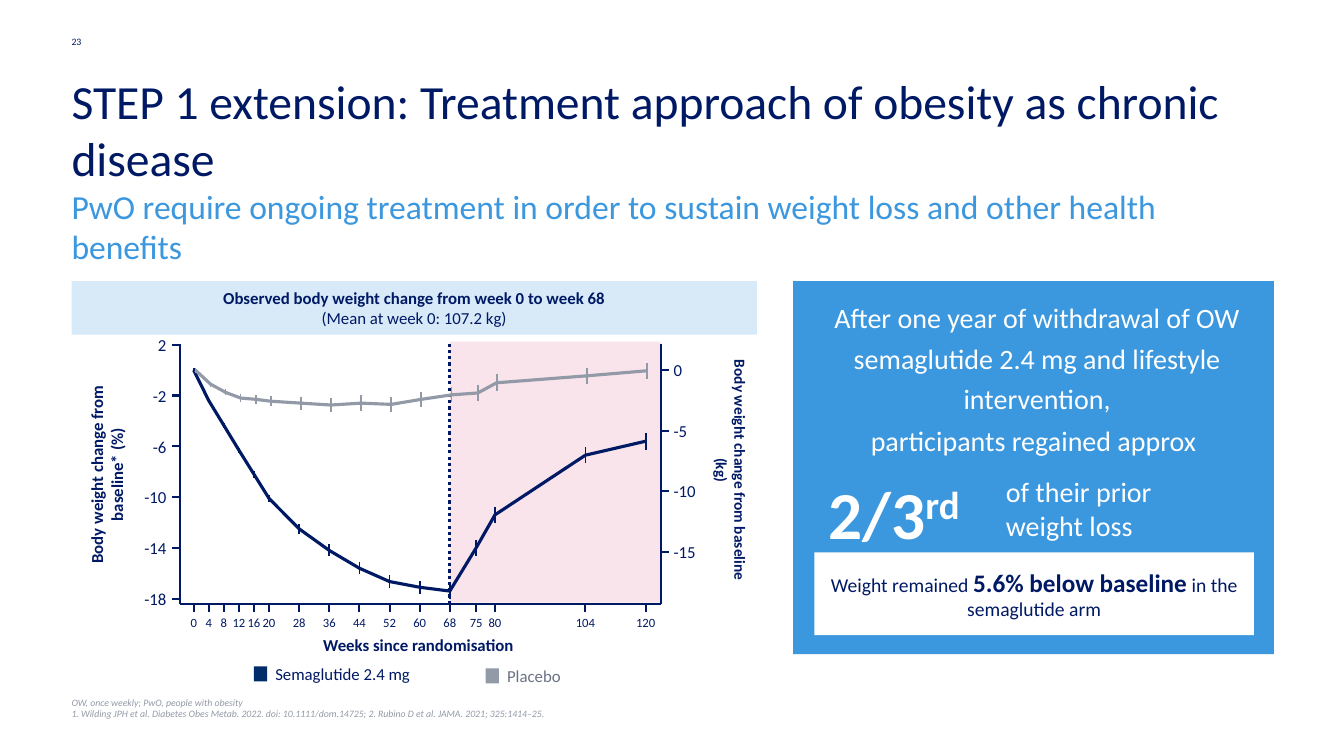
from copy import deepcopy
from pptx import Presentation
from pptx.dml.color import RGBColor
from pptx.enum.dml import MSO_LINE
from pptx.enum.shapes import MSO_CONNECTOR as CONN, MSO_SHAPE as SHAPE
from pptx.enum.text import MSO_ANCHOR as ANCHOR, MSO_AUTO_SIZE as AUTO, PP_ALIGN as ALIGN
from pptx.oxml.xmlchemy import OxmlElement
from pptx.util import Pt

NAVY, BLUE, GREY, WHITE = "001965", "3B97DE", "939AA7", "FFFFFF"
WEEKS = [0, 4, 8, 12, 16, 20, 28, 36, 44, 52, 60, 68, 75, 80, 104, 120]
SEMAGLUTIDE = [0, -2.4, -4.35, -6.3, -8.2, -10.1, -12.5, -14.2, -15.6, -16.65, -17.1,
               -17.4, -14, -11.4, -6.7, -5.6]
PLACEBO = [0, -1.1, -1.75, -2.2, -2.3, -2.45, -2.6, -2.75, -2.6, -2.7, -2.3,
           -1.95, -1.8, -1, -0.45, -0.05]
SEMAGLUTIDE_ERRORS = [1.5, 1.5, 1.8, 1.8, 2.5, 2.5, 3.6, 4.3, 4.3, 4.7, 4.7, 5.8, 5.8, 6, 5.8, 6]
PLACEBO_ERRORS = [1.8, 1.8, 2.2, 2.9, 3.2, 3.6, 4.7, 4.7, 5.8, 5.4, 5.4, 5.4, 6, 6, 5.8, 5.8]
LEFT, RIGHT, TOP, BOTTOM = 128.5, 472, 245.5, 431.5
ZERO, PER_PERCENT, PER_KG = 264.4, 9.07, 8.64
TICK = 5.8


def rgb(value):
    return RGBColor.from_string(value)


def week_x(week):
    return 138.4 + 2.69 * week


def percent_y(percent):
    return ZERO - PER_PERCENT * percent


def kg_y(kg):
    return ZERO - PER_KG * kg


class Slide:
    font = "Calibri"
    inset = (7.2, 3.6, 7.2, 3.6)

    def __init__(self, prs):
        self.s = prs.slides.add_slide(prs.slide_layouts[5])

    def put_text(self, sp, paragraphs, color=NAVY, inset=None, align=ALIGN.LEFT,
                 anchor=ANCHOR.TOP, spacing=None, **style):
        tf = sp.text_frame
        margins = dict(zip(("left", "top", "right", "bottom"), inset or self.inset))
        frame = {f"margin_{side}": Pt(gap) for side, gap in margins.items()}
        frame.update(word_wrap=True, auto_size=AUTO.NONE, vertical_anchor=anchor)
        for name, value in frame.items():
            setattr(tf, name, value)
        for i, runs in enumerate(paragraphs):
            p = tf.paragraphs[0] if i == 0 else tf.add_paragraph()
            p.alignment = align
            if spacing:
                p.line_spacing = spacing
            for text, extra in runs:
                if text == "\n":
                    mark = deepcopy(p.runs[-1]._r.rPr)
                    p.add_line_break()
                    p._p[-1].append(mark)
                    continue
                r = p.add_run()
                r.text = text
                values = {"name": self.font, "color": color, **style, **extra}
                r.font.color.rgb = rgb(values.pop("color"))
                r.font.size = Pt(values.pop("size"))
                for name, value in values.items():
                    setattr(r.font, name, value)
        return tf

    def title(self, x, y, w, h, runs):
        sp = self.s.shapes.title
        for name, value in dict(left=x, top=y, width=w, height=h).items():
            setattr(sp, name, Pt(value))
        self.put_text(sp, [runs], inset=(0, 0, 0, 0))

    def text(self, x, y, w, h, content, rotation=0, **fmt):
        sp = self.s.shapes.add_textbox(Pt(x), Pt(y), Pt(w), Pt(h))
        sp.rotation = rotation
        paragraphs = [[(content, {})]] if isinstance(content, str) else content
        return self.put_text(sp, paragraphs, **fmt)

    def rect(self, x, y, w, h, fill, alpha=None):
        sp = self.s.shapes.add_shape(SHAPE.RECTANGLE, Pt(x), Pt(y), Pt(w), Pt(h))
        sp.shadow.inherit = False
        sp.fill.solid()
        sp.fill.fore_color.rgb = rgb(fill)
        sp.line.fill.background()
        if alpha:
            node = OxmlElement("a:alpha")
            node.set("val", str(alpha * 1000))
            sp._element.spPr.find(".//{*}srgbClr").append(node)
        return sp

    def line(self, x1, y1, x2, y2, width=1.5, color=NAVY, dash=None):
        sp = self.s.shapes.add_connector(CONN.STRAIGHT, Pt(x1), Pt(y1), Pt(x2), Pt(y2))
        sp.line.color.rgb = rgb(color)
        sp.line.width = Pt(width)
        if dash:
            sp.line.dash_style = dash
        sp._element.spPr.append(OxmlElement("a:effectLst"))

    def curve(self, points, errors, color):
        emu = [(Pt(x), Pt(y)) for x, y in points]
        builder = self.s.shapes.build_freeform(*emu[0])
        builder.add_line_segments(emu[1:], close=False)
        sp = builder.convert_to_shape()
        sp.shadow.inherit = False
        sp.fill.background()
        sp.line.color.rgb = rgb(color)
        sp.line.width = Pt(2.25)
        for (x, y), half in zip(points, errors):
            self.line(x, y - half, x, y + half, 1.25, color)


def draw_chart(s):
    s.rect(week_x(68), 244, RIGHT - week_x(68), 186.5, "F5CAD9", alpha=50)
    s.line(LEFT, TOP, LEFT, BOTTOM)
    s.line(LEFT, BOTTOM, RIGHT, BOTTOM)
    s.line(RIGHT, TOP, RIGHT, BOTTOM)
    label = dict(size=12, anchor=ANCHOR.MIDDLE)
    for percent in range(2, -19, -4):
        y = percent_y(percent)
        s.line(LEFT - TICK, y, LEFT, y)
        s.text(88, y - 10.8, 38, 21.6, str(percent), align=ALIGN.RIGHT, **label)
    for kg in range(0, -16, -5):
        y = kg_y(kg)
        s.line(RIGHT, y, RIGHT + TICK, y)
        s.text(474, y - 10.8, 38, 21.6, str(kg), **label)
    for week in WEEKS:
        x = week_x(week)
        s.line(x, BOTTOM, x, BOTTOM + TICK)
        s.text(x - 16.5, 435.6, 33, 18, str(week), size=9, inset=(0, 3.6, 0, 3.6),
               align=ALIGN.CENTER, anchor=ANCHOR.MIDDLE)
    heading = dict(align=ALIGN.CENTER, anchor=ANCHOR.MIDDLE, bold=True)
    s.text(-19.4, 316, 190.8, 46, "Body weight change from baseline* (%)", 270, size=12, **heading)
    s.text(432, 319, 180.7, 33.8, "Body weight change from baseline (kg)", 90, size=11, **heading)
    s.text(188, 447.8, 221.8, 25.2, "Weeks since randomisation", size=12, **heading)
    s.line(week_x(68), TOP, week_x(68), BOTTOM, 2.25, dash=MSO_LINE.ROUND_DOT)
    for values, errors, color, shift in ((SEMAGLUTIDE, SEMAGLUTIDE_ERRORS, NAVY, 0),
                                         (PLACEBO, PLACEBO_ERRORS, GREY, 1.2)):
        points = [(week_x(week) + shift, percent_y(v)) for week, v in zip(WEEKS, values)]
        s.curve(points, errors, color)
    for x, y, name, fill, color in ((181.4, 476, "Semaglutide 2.4 mg", "002D69", NAVY),
                                    (347, 477.4, "Placebo", GREY, "6A7282")):
        s.rect(x, y, 9.4, 10.8, fill)
        s.text(x + 15.2, y, 126, 13, name, size=12, color=color, inset=(0, 0, 0, 0), spacing=0.9)
    header = s.rect(51.1, 200.9, 489.6, 38.2, "D8EAF8")
    s.put_text(header, [[("Observed body weight change from week 0 to week 68", {"bold": True})],
                        [("(Mean at week 0: 107.2 kg)", {})]],
               size=12, align=ALIGN.CENTER, anchor=ANCHOR.MIDDLE, inset=(7.2,) * 4)


def draw_message(s):
    s.rect(566.6, 200.9, 343.4, 266.4, BLUE)
    lead = dict(size=20, color=WHITE)
    block = dict(inset=(0, 0, 0, 0), spacing=1.2, align=ALIGN.CENTER, **lead)
    s.text(580.3, 210.2, 321, 85, "After one year of withdrawal of OW semaglutide 2.4 mg "
           "and lifestyle intervention,", **block)
    big = dict(size=48, bold=True)
    tf = s.text(581, 297.4, 314.6, 93.6, [[("participants regained approx", {})],
                                          [("2/3", big), ("rd", big)]], **block)
    p = tf.paragraphs[1]
    p.alignment = ALIGN.LEFT
    p._p.get_or_add_pPr().set("marL", str(Pt(10.8)))
    p.runs[1]._r.get_or_add_rPr().set("baseline", "30000")
    s.text(711.4, 335.5, 177, 55.4, "of their prior weight loss", **lead)
    box = s.rect(581.8, 394.6, 313.9, 59, WHITE)
    s.put_text(box, [[("Weight remained ", {}), ("5.6% below baseline", {"size": 18, "bold": True}),
                      (" in the semaglutide arm", {})]],
               size=14, align=ALIGN.CENTER, anchor=ANCHOR.MIDDLE, inset=(5.8, 2.9, 5.8, 2.9))


def main():
    prs = Presentation()
    prs.slide_width, prs.slide_height = Pt(960), Pt(540)
    s = Slide(prs)
    s.title(51.1, 51.1, 858.2, 102.2, [
        ("STEP 1 extension: Treatment approach of obesity as chronic disease", {"size": 34}),
        ("\n", {}),
        ("PwO require ongoing treatment in order to sustain weight loss and other health benefits",
         {"size": 24, "color": BLUE})])
    s.text(51.1, 488.9, 773.3, 25.2, [[
        ("OW, once weekly; PwO, people with obesity", {}), ("\n", {}),
        ("1. Wilding JPH et al. Diabetes Obes Metab. 2022. doi: 10.1111/dom.14725; "
         "2. Rubino D et al. JAMA. 2021; 325:1414–25.", {})]],
           size=7, italic=True, color=GREY, inset=(0, 0, 0, 0), anchor=ANCHOR.BOTTOM)
    s.text(51.1, 25.2, 13, 10, "23", size=7, inset=(0, 0, 0, 0))
    draw_chart(s)
    draw_message(s)
    prs.save("out.pptx")


if __name__ == "__main__":
    main()
